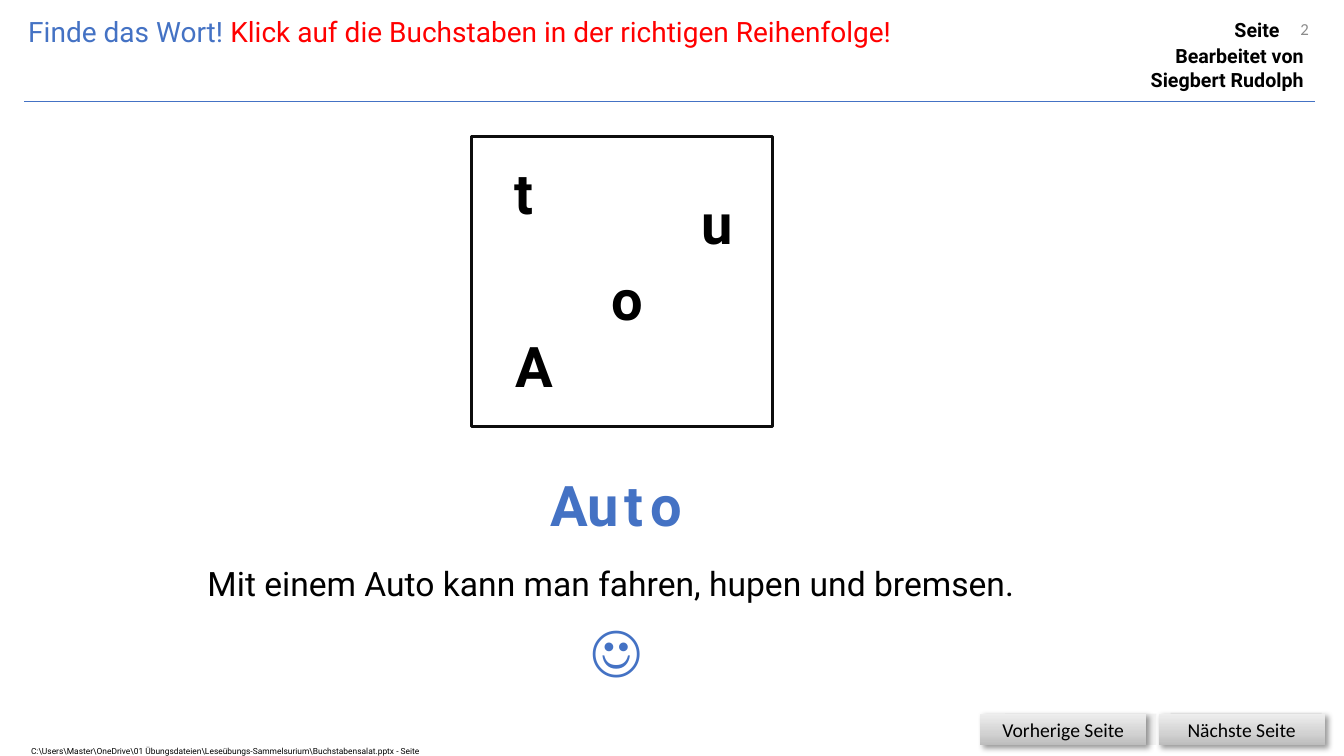
"""Build a German letter-puzzle slide about the word Auto."""
import dataclasses

import lxml.etree
import pptx
import pptx.dml.color
import pptx.enum.shapes
import pptx.enum.text
import pptx.oxml
import pptx.oxml.ns
import pptx.util

Inches = pptx.util.Inches
Align = pptx.enum.text.PP_ALIGN
Anchor = pptx.enum.text.MSO_ANCHOR
COLORS = {
    "text": "000000",
    "blue": "4472C4",
    "red": "FF0000",
    "white": "FFFFFF",
    "frame": "0D0D0D",
    "number": "8C8C8C",
    "panel": "F2F2F2",
    "dark": "BDBDBD",
    "middle": "D1D1D1",
    "light": "EEEEEE",
}
GRADIENT = ((0, "dark"), (35, "middle"), (100, "light"))


@dataclasses.dataclass(frozen=True)
class Letter:
    """A single large character and its position."""
    text: str
    left: float
    top: float
    color: str = "text"


@dataclasses.dataclass(frozen=True)
class Button:
    """A navigation button with the panel behind it."""
    text: str
    left: float
    panel_left: float
    panel_top: float
    panel_height: float


@dataclasses.dataclass(frozen=True)
class Label:
    """A text box with its format."""
    lines: tuple[str, ...]
    box: tuple[float, float, float, float]
    size: float
    bold: bool = False
    color: str = "text"
    font: str = "Roboto"
    align: Align = Align.LEFT
    anchor: Anchor = Anchor.TOP


WORD_TOP = 4.62
LETTERS = (
    Letter("A", 5.01, 3.24),
    Letter("o", 5.97, 2.58),
    Letter("t", 5, 1.52),
    Letter("u", 6.86, 1.82),
    Letter("A", 5.36, WORD_TOP, "blue"),
    Letter("u", 5.73, WORD_TOP, "blue"),
    Letter("t", 6.1, WORD_TOP, "blue"),
    Letter("o", 6.35, WORD_TOP, "blue"),
    Letter("☺", 5.76, 6.05, "blue"),
)
BUTTONS = (
    Button("Nächste Seite", 11.49, 11.61, 7.07, 0.32),
    Button("Vorherige Seite", 9.72, 9.97, 7.08, 0.31),
)
LABELS = (
    Label(("2",), (10.75, 0.09, 2.33, 0.4), 12, color="number",
          font="Calibri", align=Align.RIGHT, anchor=Anchor.MIDDLE),
    Label(("Seite",), (11.27, 0.13, 1.52, 0.33), 14, bold=True, align=Align.RIGHT),
    Label(("Bearbeitet von", "Siegbert Rudolph"), (11.27, 0.39, 1.76, 0.57), 14,
          bold=True, align=Align.RIGHT),
    Label(("Mit einem Auto kann man fahren, hupen und bremsen.",),
          (1.96, 5.54, 8.44, 0.5), 24),
    Label(("C:\\Users\\Master\\OneDrive\\01 Übungsdateien\\Leseübungs-Sammelsurium"
           "\\Buchstabensalat.pptx - Seite",), (0.21, 7.35, 4.1, 0.2), 6),
)


def rgb(name: str) -> pptx.dml.color.RGBColor:
    """Return a named color."""
    return pptx.dml.color.RGBColor.from_string(COLORS[name])


def write(paragraph, text: str, *, size: float, font: str = "Roboto", color: str = "text",
          bold: bool = False, align: Align = Align.LEFT) -> None:
    """Append formatted text to a paragraph."""
    paragraph.alignment = align
    run = paragraph.add_run()
    run.text = text
    run.font.name = font
    run.font.size = pptx.util.Pt(size)
    run.font.bold = bold
    run.font.color.rgb = rgb(color)


def add_label(slide, label: Label) -> None:
    """Draw a text box with one paragraph per line."""
    shape = slide.shapes.add_textbox(*map(Inches, label.box))
    frame = shape.text_frame
    frame.word_wrap = True
    frame.vertical_anchor = label.anchor
    for index, line in enumerate(label.lines):
        paragraph = frame.add_paragraph() if index else frame.paragraphs[0]
        write(paragraph, line, size=label.size, font=label.font, color=label.color,
              bold=label.bold, align=label.align)


def add_rectangle(slide, box: tuple[float, float, float, float], fill: str | None = None):
    """Draw a rectangle without line or shadow."""
    shape = slide.shapes.add_shape(
        pptx.enum.shapes.MSO_SHAPE.RECTANGLE, *map(Inches, box))
    shape.shadow.inherit = False
    shape.line.fill.background()
    if fill:
        shape.fill.solid()
        shape.fill.fore_color.rgb = rgb(fill)
    else:
        shape.fill.background()
    return shape


def add_gradient_and_shadow(shape) -> None:
    """Give a shape an upward gradient and a soft shadow."""
    namespace = pptx.oxml.ns.nsdecls("a")
    stops = "".join(
        f'<a:gs pos="{position * 1000}"><a:srgbClr val="{COLORS[color]}"/></a:gs>'
        for position, color in GRADIENT)
    gradient = pptx.oxml.parse_xml(
        f'<a:gradFill {namespace} rotWithShape="1"><a:gsLst>{stops}</a:gsLst>'
        '<a:lin ang="16200000" scaled="0"/></a:gradFill>')
    shadow = pptx.oxml.parse_xml(
        f'<a:outerShdw {namespace} blurRad="50800" dist="38100" dir="2700000" '
        f'algn="tl" rotWithShape="0"><a:srgbClr val="{COLORS["text"]}">'
        '<a:alpha val="40000"/></a:srgbClr></a:outerShdw>')
    properties = shape._element.spPr
    properties.replace(properties.find(pptx.oxml.ns.qn("a:noFill")), gradient)
    properties.find(pptx.oxml.ns.qn("a:effectLst")).append(shadow)


def add_button(slide, button: Button) -> None:
    """Draw a navigation button on its panel."""
    add_rectangle(
        slide, (button.panel_left, button.panel_top, 1.5, button.panel_height), "panel")
    shape = add_rectangle(slide, (button.left, 7.08, 1.65, 0.31))
    add_gradient_and_shadow(shape)
    shape.text_frame.vertical_anchor = Anchor.MIDDLE
    write(shape.text_frame.paragraphs[0], button.text, size=14, font="Calibri",
          align=Align.CENTER)


def add_title(slide) -> None:
    """Place and fill the title."""
    title = slide.shapes.title
    title.left, title.top, title.width, title.height = map(Inches, (0.18, 0.09, 9.02, 0.44))
    title.fill.solid()
    title.fill.fore_color.rgb = rgb("white")
    frame = title.text_frame
    frame.word_wrap = True
    frame.auto_size = pptx.enum.text.MSO_AUTO_SIZE.NONE
    frame.vertical_anchor = Anchor.TOP
    paragraph = frame.paragraphs[0]
    write(paragraph, "Finde das Wort! ", size=20, color="blue")
    write(paragraph, "Klick auf die Buchstaben in der richtigen Reihenfolge!",
          size=20, color="red")


def add_rule(slide) -> None:
    """Draw the line below the header."""
    rule = slide.shapes.add_connector(
        pptx.enum.shapes.MSO_CONNECTOR.STRAIGHT, *map(Inches, (0.24, 1.01, 13.04, 1.01)))
    rule.line.color.rgb = rgb("blue")
    rule.line.width = pptx.util.Pt(0.5)
    lxml.etree.SubElement(rule._element.spPr, pptx.oxml.ns.qn("a:effectLst"))


def main() -> None:
    """Build and save the presentation."""
    presentation = pptx.Presentation()
    presentation.slide_width = Inches(13.33)
    presentation.slide_height = Inches(7.5)
    slide = presentation.slides.add_slide(presentation.slide_layouts[5])
    add_title(slide)
    for letter in LETTERS:
        add_label(slide, Label((letter.text,), (letter.left, letter.top, 0.41, 0.77), 40,
                               bold=True, color=letter.color))
    frame = add_rectangle(slide, (4.68, 1.35, 2.98, 2.88))
    frame.line.color.rgb = rgb("frame")
    frame.line.width = pptx.util.Pt(2.25)
    for button in BUTTONS:
        add_button(slide, button)
    add_rule(slide)
    for label in LABELS:
        add_label(slide, label)
    presentation.save("out.pptx")


if __name__ == "__main__":
    main()
